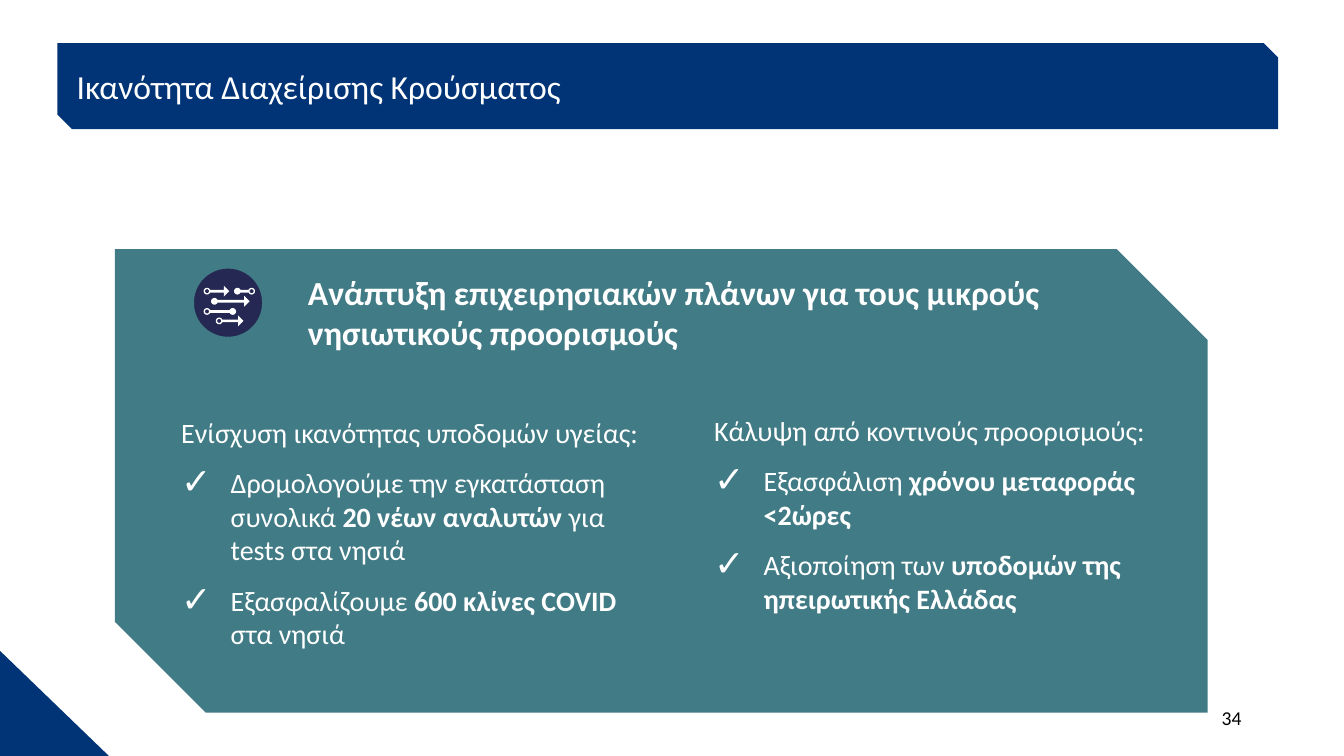
from math import cos, pi, sin
from lxml import etree
from pptx import Presentation
from pptx.dml.color import RGBColor
from pptx.enum.shapes import MSO_SHAPE
from pptx.enum.text import MSO_ANCHOR, PP_ALIGN
from pptx.oxml.ns import qn
from pptx.util import Inches, Pt

SNIP, OVAL = MSO_SHAPE.SNIP_2_DIAG_RECTANGLE, MSO_SHAPE.OVAL
TRIANGLE = MSO_SHAPE.RIGHT_TRIANGLE
MIDDLE = MSO_ANCHOR.MIDDLE
LEFT, RIGHT = PP_ALIGN.LEFT, PP_ALIGN.RIGHT
COLORS = {"blue": "013476", "teal": "417B85", "navy": "242852",
          "white": "FFFFFF", "black": "000000"}

prs = Presentation()
prs.slide_width, prs.slide_height = Inches(13.33), Inches(7.5)
W, H = prs.slide_width / 100, prs.slide_height / 100
s = prs.slides.add_slide(prs.slide_layouts[6])


def paint(sp, color):
    sp.shadow.inherit = False
    sp.fill.solid()
    sp.fill.fore_color.rgb = RGBColor.from_string(COLORS[color])
    sp.line.fill.background()


def add_run(p, text, size, color="white", bold=False):
    r = p.add_run()
    r.text = text
    r.font.name = "Calibri"
    r.font.size = Pt(size)
    r.font.bold = bold
    r.font.color.rgb = RGBColor.from_string(COLORS[color])


blocks = {}
for name, kind, x, y, w, h, color in [
        ("corner", TRIANGLE, 0, 86.1, 8.1, 13.9, "blue"),
        ("banner", SNIP, 4.28, 5.72, 90.82, 11.35, "blue"),
        ("panel", SNIP, 8.55, 32.97, 81.3, 61.3, "teal")]:
    sp = s.shapes.add_shape(kind, int(x * W), int(y * H), int(w * W), int(h * H))
    paint(sp, color)
    blocks[name] = sp

blocks["panel"].adjustments[0] = 0
blocks["panel"].adjustments[1] = 0.196

tf = blocks["banner"].text_frame
tf.word_wrap = True
tf.vertical_anchor = MIDDLE
tf.margin_left = tf.margin_right = Inches(0.12)
tf.margin_top = tf.margin_bottom = Inches(0.02)
tf.paragraphs[0].alignment = LEFT
add_run(tf.paragraphs[0], "Ικανότητα Διαχείρισης Κρούσματος", 24)

texts = [
    (12.75, 54.25, 35.5, 32.8, LEFT, 20, "white", False,
     "Ενίσχυση ικανότητας υποδομών υγείας:", [
         ["Δρομολογούμε την εγκατάσταση συνολικά ", "20 νέων αναλυτών ",
          "για tests στα νησιά"],
         ["Εξασφαλίζουμε ", "600 κλίνες COVID ", "στα νησιά"]]),
    (22.18, 35.3, 56.4, 12.1, LEFT, 24, "white", True,
     "Ανάπτυξη επιχειρησιακών πλάνων για τους μικρούς νησιωτικούς προορισμούς", []),
    (52.4, 54, 37.4, 28.3, LEFT, 20, "white", False,
     "Κάλυψη από κοντινούς προορισμούς:", [
         ["Εξασφάλιση ", "χρόνου μεταφοράς <2ώρες"],
         ["Αξιοποίηση των ", "υποδομών της ηπειρωτικής Ελλάδας"]]),
    (70.62, 92.67, 22.5, 5.33, RIGHT, 14, "black", False, "34", []),
]
for x, y, w, h, align, size, color, bold, heading, points in texts:
    tf = s.shapes.add_textbox(int(x * W), int(y * H), int(w * W), int(h * H)).text_frame
    tf.word_wrap = True
    p = tf.paragraphs[0]
    p.alignment = align
    add_run(p, heading, size, color, bold)
    for point in points:
        p.space_after = Pt(6)
        p = tf.add_paragraph()
        p.space_before = Pt(6)
        pPr = p._p.get_or_add_pPr()
        pPr.set("marL", str(Inches(0.49)))
        pPr.set("indent", str(-Inches(0.49)))
        etree.SubElement(pPr, qn("a:buSzPct")).set("val", "130000")
        etree.SubElement(pPr, qn("a:buFont")).set("typeface", "Calibri")
        etree.SubElement(pPr, qn("a:buChar")).set("char", "✓")
        for i, text in enumerate(point):
            add_run(p, text, size, color, bold=i == 1)

disc_x, disc_y, disc = 14.45 * W, 35.57 * H, 5.03 * W
sp = s.shapes.add_shape(OVAL, int(disc_x), int(disc_y), int(disc), int(disc))
paint(sp, "navy")
sp.line.color.rgb = RGBColor.from_string(COLORS["navy"])
sp.line.width = Pt(0.25)

NODE, HOLE, BAR, HEAD = 0.05, 0.03, 0.02, 0.08
outlines = []
for col, row, hollow in [(0.19, 0.33, True), (0.64, 0.33, False),
                         (0.85, 0.33, True), (0.3, 0.48, False),
                         (0.19, 0.63, True), (0.57, 0.63, False),
                         (0.37, 0.77, True)]:
    for radius in [NODE, -HOLE] if hollow else [NODE]:
        turn = pi / 8 if radius > 0 else -pi / 8
        outlines.append([(col + radius * cos(i * turn), row + radius * sin(i * turn))
                         for i in range(16)])
for start, end, row, pointed in [(0.69, 0.8, 0.33, False), (0.24, 0.52, 0.33, True),
                                 (0.35, 0.82, 0.48, True), (0.24, 0.52, 0.63, False),
                                 (0.42, 0.73, 0.77, True)]:
    neck = end - HEAD if pointed else end
    tip = [(neck, row - HEAD), (end, row), (neck, row + HEAD)] if pointed else []
    outlines.append([(start, row - BAR), (neck, row - BAR)] + tip
                    + [(neck, row + BAR), (start, row + BAR)])

fb = None
for outline in outlines:
    pts = [(disc_x + x * disc, disc_y + y * disc) for x, y in outline]
    if fb is None:
        fb = s.shapes.build_freeform(*pts[0])
    else:
        fb.move_to(*pts[0])
    fb.add_line_segments(pts[1:])
paint(fb.convert_to_shape(), "white")

prs.save("out.pptx")
